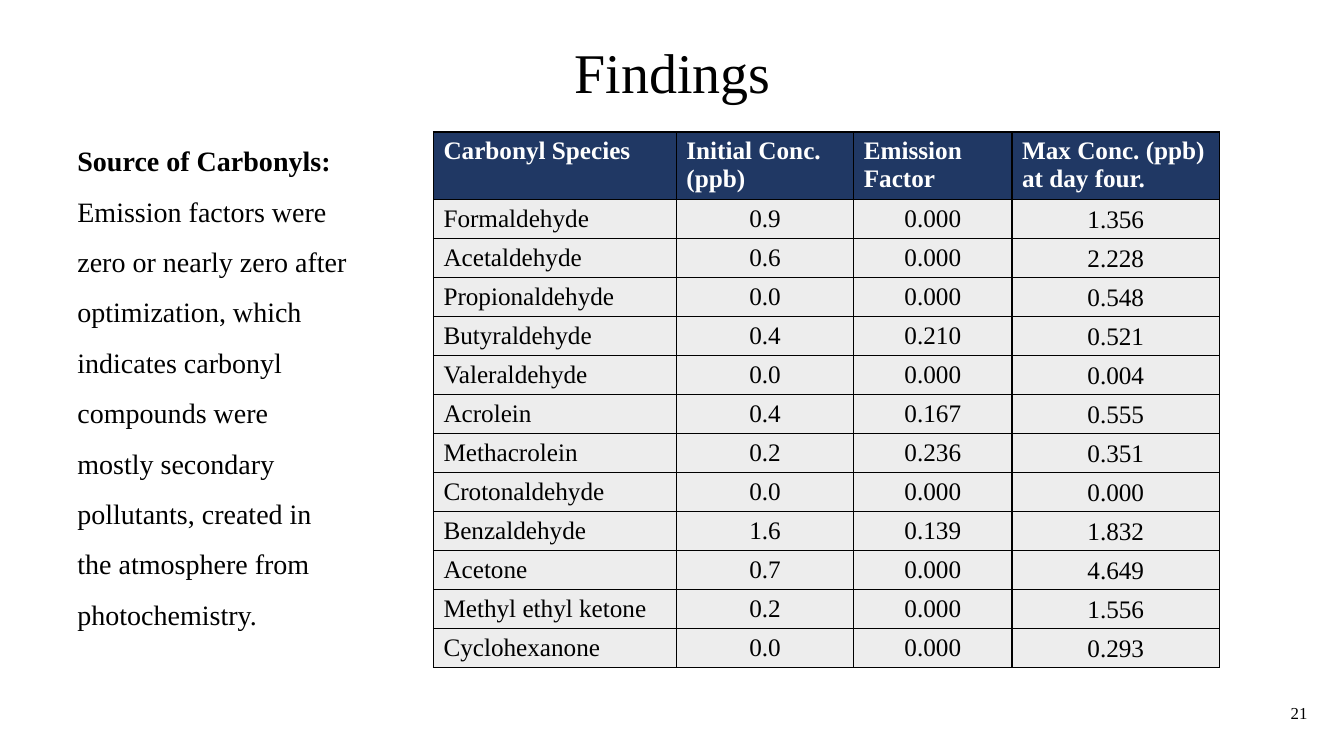
from lxml import etree
from pptx import Presentation
from pptx.dml.color import RGBColor
from pptx.enum.text import MSO_ANCHOR as Anchor, MSO_AUTO_SIZE as AutoSize, PP_ALIGN as Align
from pptx.oxml.ns import qn
from pptx.util import Pt

BLACK = RGBColor(0x00, 0x00, 0x00)
WHITE = RGBColor(0xFF, 0xFF, 0xFF)
NAVY = RGBColor(0x20, 0x38, 0x64)
PALE_GREY = RGBColor(0xED, 0xED, 0xED)
FONT = "Times New Roman"

HEADERS = ("Carbonyl Species", "Initial Conc. (ppb)", "Emission Factor",
           "Max Conc. (ppb) at day four.")
SPECIES = (
    ("Formaldehyde", "0.9", "0.000", "1.356"),
    ("Acetaldehyde", "0.6", "0.000", "2.228"),
    ("Propionaldehyde", "0.0", "0.000", "0.548"),
    ("Butyraldehyde", "0.4", "0.210", "0.521"),
    ("Valeraldehyde", "0.0", "0.000", "0.004"),
    ("Acrolein", "0.4", "0.167", "0.555"),
    ("Methacrolein", "0.2", "0.236", "0.351"),
    ("Crotonaldehyde", "0.0", "0.000", "0.000"),
    ("Benzaldehyde", "1.6", "0.139", "1.832"),
    ("Acetone", "0.7", "0.000", "4.649"),
    ("Methyl ethyl ketone", "0.2", "0.000", "1.556"),
    ("Cyclohexanone", "0.0", "0.000", "0.293"),
)
COLUMN_SHARES = (2.41, 1.76, 1.57, 2.06)
HEADER_HEIGHT = 48.2
LAST_COLUMN = len(HEADERS) - 1
TIGHT_CELL = {"vertical_anchor": Anchor.MIDDLE, "margin_left": Pt(0.7), "margin_top": Pt(0.7),
              "margin_right": Pt(0.7), "margin_bottom": Pt(0)}
SOURCE_NOTE = (
    ("Source of Carbonyls:", True),
    ("Emission factors were zero or nearly zero after optimization, which indicates carbonyl "
     "compounds were mostly secondary pollutants, created in the atmosphere from "
     "photochemistry.", False),
)


def apply_format(target, values):
    for name, value in values.items():
        setattr(target, name, value)


def write(paragraph, text, size, color=BLACK, bold=False, **paragraph_format):
    run = paragraph.add_run()
    run.text = text
    apply_format(run.font, {"name": FONT, "size": Pt(size), "bold": bold})
    run.font.color.rgb = color
    apply_format(paragraph, paragraph_format)


def add_borders(cell):
    properties = cell._tc.get_or_add_tcPr()
    for position, side in enumerate(("a:lnL", "a:lnR", "a:lnT", "a:lnB")):
        line = etree.Element(qn(side), w=str(Pt(1)))
        fill = etree.SubElement(line, qn("a:solidFill"))
        etree.SubElement(fill, qn("a:srgbClr"), val=str(BLACK))
        properties.insert(position, line)


def add_title(slide, left, top, width, height):
    title = slide.shapes.title
    apply_format(title, {"left": Pt(left), "top": Pt(top),
                         "width": Pt(width), "height": Pt(height)})
    apply_format(title.text_frame, {"vertical_anchor": Anchor.MIDDLE, "word_wrap": True,
                                    "auto_size": AutoSize.NONE})
    write(title.text_frame.paragraphs[0], "Findings", 40, alignment=Align.CENTER,
          line_spacing=0.9, space_after=Pt(6))


def add_text_frame(slide, left, top, width, height, **frame_format):
    box = slide.shapes.add_textbox(Pt(left), Pt(top), Pt(width), Pt(height))
    apply_format(box.text_frame, {"word_wrap": True, **frame_format})
    return box.text_frame


def add_source_note(slide, left, top, width, height):
    frame = add_text_frame(slide, left, top, width, height,
                           auto_size=AutoSize.SHAPE_TO_FIT_TEXT)
    for index, (text, bold) in enumerate(SOURCE_NOTE):
        paragraph = frame.add_paragraph() if index else frame.paragraphs[0]
        write(paragraph, text, 20, bold=bold, line_spacing=1.5)


def add_species_table(slide, left, top, width, height):
    rows = (HEADERS, *SPECIES)
    table = slide.shapes.add_table(len(rows), len(HEADERS), Pt(left), Pt(top),
                                   Pt(width), Pt(height)).table
    table.horz_banding = False
    for column, share in zip(table.columns, COLUMN_SHARES):
        column.width = Pt(width * share / sum(COLUMN_SHARES))
    body_height = (height - HEADER_HEIGHT) / len(SPECIES)

    for row_index, values in enumerate(rows):
        is_header = row_index == 0
        table.rows[row_index].height = Pt(HEADER_HEIGHT if is_header else body_height)
        for column_index, text in enumerate(values):
            cell = table.cell(row_index, column_index)
            cell.fill.solid()
            cell.fill.fore_color.rgb = NAVY if is_header else PALE_GREY
            add_borders(cell)
            if not is_header and column_index == LAST_COLUMN:
                apply_format(cell, TIGHT_CELL)
            centred = not is_header and column_index > 0
            write(cell.text_frame.paragraphs[0], text, 18, WHITE if is_header else BLACK,
                  is_header, alignment=Align.CENTER if centred else Align.LEFT)


def add_slide_number(slide, left, top, width, height):
    frame = add_text_frame(slide, left, top, width, height, vertical_anchor=Anchor.MIDDLE)
    write(frame.paragraphs[0], "21", 12, alignment=Align.RIGHT)


def main():
    presentation = Presentation()
    apply_format(presentation, {"slide_width": Pt(960), "slide_height": Pt(540)})
    slide = presentation.slides.add_slide(presentation.slide_layouts.get_by_name("Title Only"))
    add_species_table(slide, 309.6, 94.3, 561.6, 382.9)
    add_source_note(slide, 48.2, 87.1, 207.4, 402.5)
    add_title(slide, 329.8, 14.4, 301, 78.5)
    add_slide_number(slide, 905, 493.2, 36, 32.4)
    presentation.save("out.pptx")


if __name__ == "__main__":
    main()
